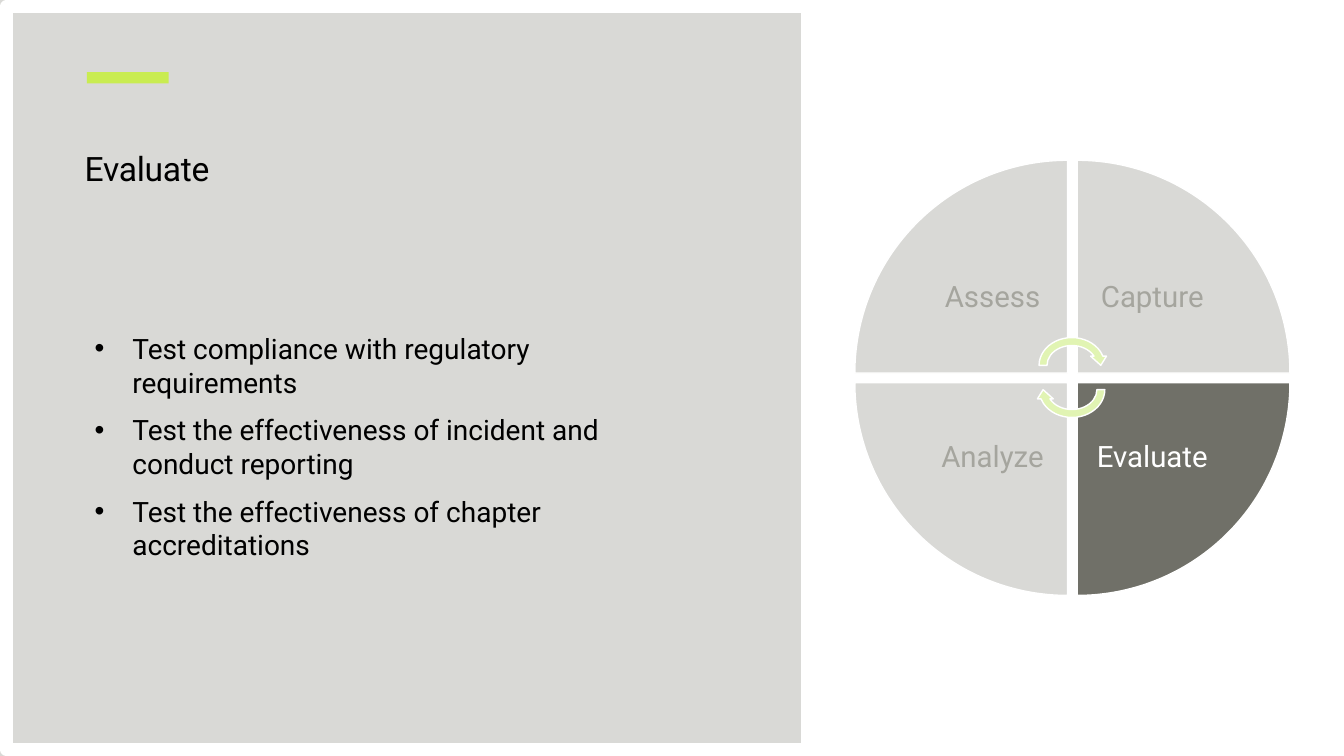
from dataclasses import dataclass
from typing import Optional

from lxml.etree import SubElement
from pptx import Presentation
from pptx.dml.color import RGBColor
from pptx.enum.shapes import MSO_CONNECTOR, MSO_SHAPE
from pptx.enum.text import MSO_ANCHOR, PP_ALIGN
from pptx.oxml.ns import qn
from pptx.util import Pt

FONT = "Roboto"
WHITE, BLACK = "FFFFFF", "000000"
GREY, MUTED, DARK = "D9D9D6", "A5A59E", "707068"
LIME, PALE_LIME = "C9EC51", "E1F4B3"

WHEEL_LEFT, WHEEL_TOP = 610.6, 114.5
WEDGE, PITCH, LABEL = 152, 158.8, 107.3
ARROW_LEFT, ARROW_W, ARROW_H = 739.4, 52.6, 45.4


@dataclass(frozen=True)
class Quadrant:
    name: str
    col: int
    row: int
    rotation: int
    fill: str = GREY
    color: str = MUTED


@dataclass(frozen=True)
class Arrow:
    top: float
    rotation: int


QUADRANTS = [
    Quadrant("Assess", 0, 0, 0),
    Quadrant("Capture", 1, 0, 90),
    Quadrant("Evaluate", 1, 1, 180, DARK, WHITE),
    Quadrant("Analyze", 0, 1, 270),
]
ARROWS = [Arrow(238.3, 0), Arrow(255.6, 180)]
POINTS = [
    "Test compliance with regulatory requirements",
    "Test the effectiveness of incident and conduct reporting",
    "Test the effectiveness of chapter accreditations",
]


def rgb(value: str) -> RGBColor:
    return RGBColor.from_string(value)


def add_shape(s, kind: MSO_SHAPE, x: float, y: float, w: float, h: float,
              fill: Optional[str] = None, line: Optional[str] = None,
              width: float = 1, rotation: int = 0):
    sp = s.shapes.add_shape(kind, Pt(x), Pt(y), Pt(w), Pt(h))
    sp.shadow.inherit = False
    sp.rotation = rotation
    if fill:
        sp.fill.solid()
        sp.fill.fore_color.rgb = rgb(fill)
    else:
        sp.fill.background()
    if line:
        sp.line.color.rgb = rgb(line)
        sp.line.width = Pt(width)
    else:
        sp.line.fill.background()
    return sp


def add_divider(s, x: float, top: float, bottom: float) -> None:
    line = s.shapes.add_connector(
        MSO_CONNECTOR.STRAIGHT, Pt(x), Pt(top), Pt(x), Pt(bottom))
    line.line.color.rgb = rgb(WHITE)
    line.line.width = Pt(9.5)
    SubElement(line._element.spPr, qn("a:effectLst"))


def add_bullet(p, indent: float) -> None:
    pPr = p._p.get_or_add_pPr()
    pPr.set("marL", str(Pt(indent)))
    pPr.set("indent", str(-Pt(indent)))
    SubElement(pPr, qn("a:buFont")).set("typeface", "Arial")
    SubElement(pPr, qn("a:buChar")).set("char", "•")


def add_text(s, lines: list[str], x: float, y: float, w: float, h: float, *,
             size: float, color: str = BLACK, inset: tuple[float, float] = (0, 0),
             align: PP_ALIGN = PP_ALIGN.LEFT, anchor: MSO_ANCHOR = MSO_ANCHOR.TOP,
             line_spacing: float = 1, gap: float = 0, bullet_indent: float = 0,
             tracking: float = 0) -> None:
    tf = s.shapes.add_textbox(Pt(x), Pt(y), Pt(w), Pt(h)).text_frame
    tf.word_wrap = True
    tf.vertical_anchor = anchor
    tf.margin_left = tf.margin_right = Pt(inset[0])
    tf.margin_top = tf.margin_bottom = Pt(inset[1])
    for i, line in enumerate(lines):
        p = tf.add_paragraph() if i else tf.paragraphs[0]
        p.alignment = align
        p.line_spacing = line_spacing
        if i:
            p.space_before = Pt(gap)
        if bullet_indent:
            add_bullet(p, bullet_indent)
        r = p.add_run()
        r.text = line
        r.font.name = FONT
        r.font.size = Pt(size)
        r.font.color.rgb = rgb(color)
        if tracking:
            r._r.get_or_add_rPr().set("spc", str(round(tracking * 100)))


def add_quadrant(s, q: Quadrant) -> None:
    x, y = WHEEL_LEFT + q.col * PITCH, WHEEL_TOP + q.row * PITCH
    add_shape(s, MSO_SHAPE.PIE_WEDGE, x, y, WEDGE, WEDGE,
              fill=q.fill, line=WHITE, rotation=q.rotation)
    inward = WEDGE - LABEL
    add_text(s, [q.name], x + (1 - q.col) * inward, y + (1 - q.row) * inward,
             LABEL, LABEL, size=21, color=q.color, inset=(11.5, 11.5),
             align=PP_ALIGN.CENTER, anchor=MSO_ANCHOR.MIDDLE, line_spacing=0.9)


def main() -> None:
    prs = Presentation()
    prs.slide_width, prs.slide_height = Pt(960), Pt(540)
    s = prs.slides.add_slide(prs.slide_layouts[6])

    add_shape(s, MSO_SHAPE.RECTANGLE, 0, 0, 576.7, 540, fill=GREY)
    add_shape(s, MSO_SHAPE.RECTANGLE, 62, 51.6, 58.5, 8, fill=LIME)
    add_divider(s, 576.7, 6.5, 535.7)
    add_shape(s, MSO_SHAPE.RECTANGLE, 4.5, 4.8, 949, 530.6, line=WHITE, width=9.5)

    add_text(s, POINTS, 60.5, 233.3, 419.8, 259.2, size=20, inset=(7.2, 3.6),
             gap=10, bullet_indent=27)
    add_text(s, ["Evaluate"], 60.5, 105.8, 440.6, 118, size=24, tracking=-0.2)

    for q in QUADRANTS:
        add_quadrant(s, q)
    for arrow in ARROWS:
        add_shape(s, MSO_SHAPE.CIRCULAR_ARROW, ARROW_LEFT, arrow.top, ARROW_W, ARROW_H,
                  fill=PALE_LIME, line=WHITE, rotation=arrow.rotation)

    prs.save("out.pptx")


if __name__ == "__main__":
    main()
